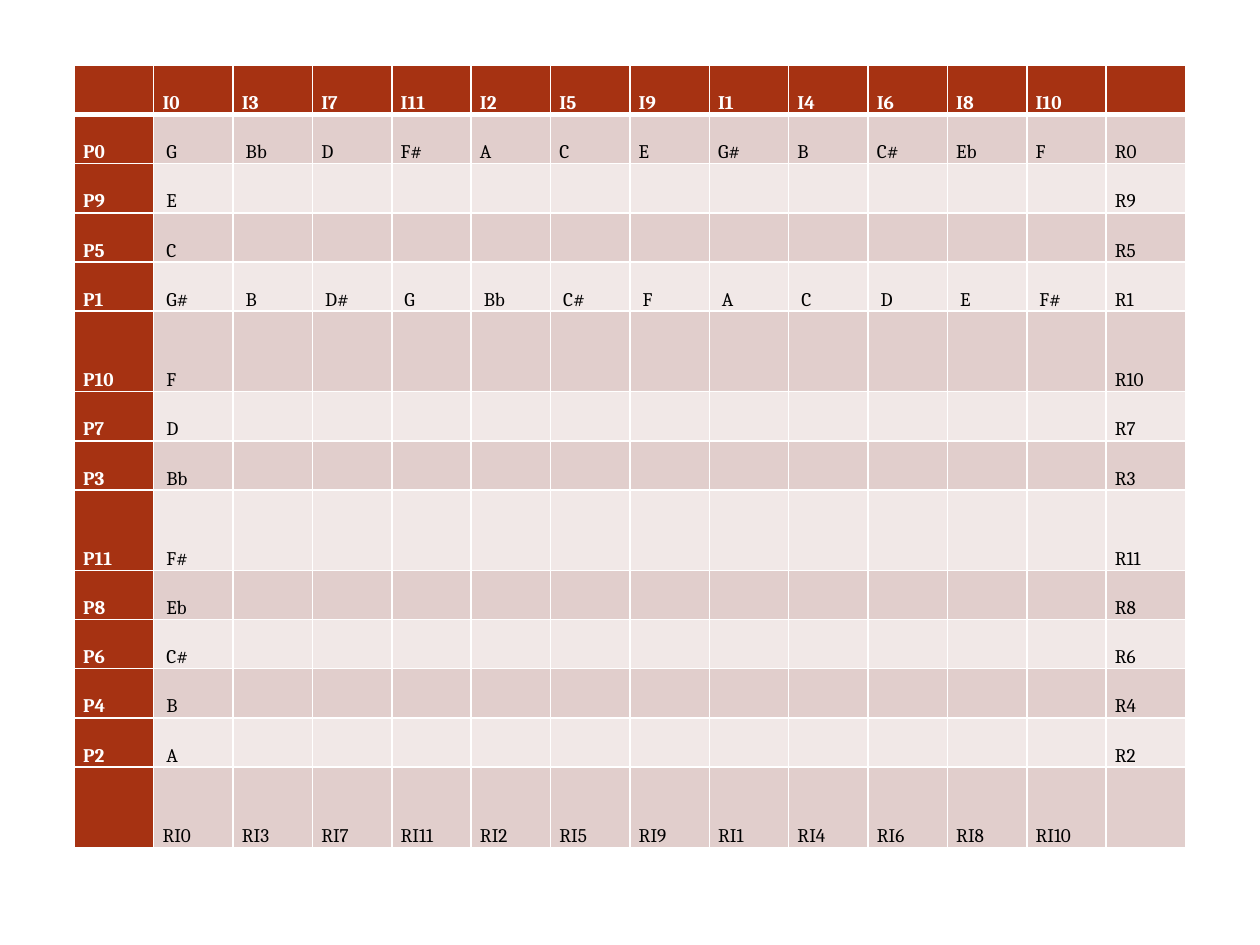
from lxml import etree
from pptx import Presentation
from pptx.dml.color import RGBColor
from pptx.enum.text import MSO_ANCHOR
from pptx.oxml.ns import qn
from pptx.util import Inches, Pt

BOTTOM = MSO_ANCHOR.BOTTOM
WHITE = RGBColor(0xFF, 0xFF, 0xFF)
BLACK = RGBColor(0x00, 0x00, 0x00)
RUST = RGBColor(0xA6, 0x32, 0x12)
BAND_DARK = RGBColor(0xE1, 0xCE, 0xCC)
BAND_LIGHT = RGBColor(0xF1, 0xE8, 0xE7)

FONT = "Cambria"
COL_WIDTH, ROW_HEIGHT, TALL_ROW_HEIGHT = 0.63, 0.39, 0.64
MARGIN, NOTE_MARGIN = 0.07, 0.1
TALL_ROWS = {5, 8, 13}

INVERSIONS = [0, 3, 7, 11, 2, 5, 9, 1, 4, 6, 8, 10]
PRIMES = [0, 9, 5, 1, 10, 7, 3, 11, 8, 6, 4, 2]
FIRST_COLUMN = "G E C G# F D Bb F# Eb C# B A".split()
FILLED_ROWS = {
    0: "G Bb D F# A C E G# B C# Eb F".split(),
    1: "G# B D# G Bb C# F A C D E F#".split(),
}


def matrix_rows():
    """Return the twelve-tone matrix with its row and column labels."""
    rows = [["", *(f"I{n}" for n in INVERSIONS), ""]]
    for n, first in zip(PRIMES, FIRST_COLUMN):
        notes = FILLED_ROWS.get(n, [first] + [""] * 11)
        rows.append([f"P{n}", *notes, f"R{n}"])
    rows.append(["", *(f"RI{n}" for n in INVERSIONS), ""])
    return rows


def is_indented(row, col):
    """Tell whether a cell holds a note set slightly in from the labels."""
    if not (1 <= row <= 12 and 1 <= col <= 12):
        return False
    return col == 1 or PRIMES[row - 1] == 1 or (row, col) == (1, 2)


def set_borders(cell, widths):
    tc_pr = cell._tc.get_or_add_tcPr()
    for side, width in widths.items():
        ln = etree.SubElement(tc_pr, qn(f"a:ln{side}"), w=str(Pt(width)))
        fill = etree.SubElement(ln, qn("a:solidFill"))
        etree.SubElement(fill, qn("a:srgbClr"), val=str(WHITE))


def write_text(cell, text, is_header):
    p = cell.text_frame.paragraphs[0]
    p.line_spacing = 1.15
    r = p.add_run()
    r.text = text
    formats = {"name": FONT, "size": Pt(11), "bold": is_header}
    for name, value in formats.items():
        setattr(r.font, name, value)
    r.font.color.rgb = WHITE if is_header else BLACK


def format_cell(cell, row, col, text):
    is_header = row == 0 or col == 0
    set_borders(cell, {"L": 1, "R": 1, "T": 3 if row == 1 else 1,
                       "B": 3 if row == 0 else 1})
    cell.fill.solid()
    band = BAND_DARK if row % 2 else BAND_LIGHT
    cell.fill.fore_color.rgb = RUST if is_header else band
    layout = {
        "margin_left": Inches(NOTE_MARGIN if is_indented(row, col) else MARGIN),
        "margin_right": Inches(MARGIN),
        "margin_top": 0,
        "margin_bottom": 0,
        "vertical_anchor": BOTTOM,
    }
    for name, value in layout.items():
        setattr(cell, name, value)
    if text:
        write_text(cell, text, is_header)


def add_matrix(slide, rows):
    heights = [TALL_ROW_HEIGHT if i in TALL_ROWS else ROW_HEIGHT
               for i in range(len(rows))]
    n_cols = len(rows[0])
    table = slide.shapes.add_table(
        len(rows), n_cols, Inches(0.59), Inches(0.52),
        Inches(COL_WIDTH * n_cols), Inches(sum(heights))).table
    table.first_col = True
    for column in table.columns:
        column.width = Inches(COL_WIDTH)
    for i, (height, texts) in enumerate(zip(heights, rows)):
        table.rows[i].height = Inches(height)
        for j, text in enumerate(texts):
            format_cell(table.cell(i, j), i, j, text)


def main():
    prs = Presentation()
    prs.slide_width, prs.slide_height = Inches(10), Inches(7.5)
    slide = prs.slides.add_slide(prs.slide_layouts[6])
    add_matrix(slide, matrix_rows())
    prs.save("out.pptx")


if __name__ == "__main__":
    main()
